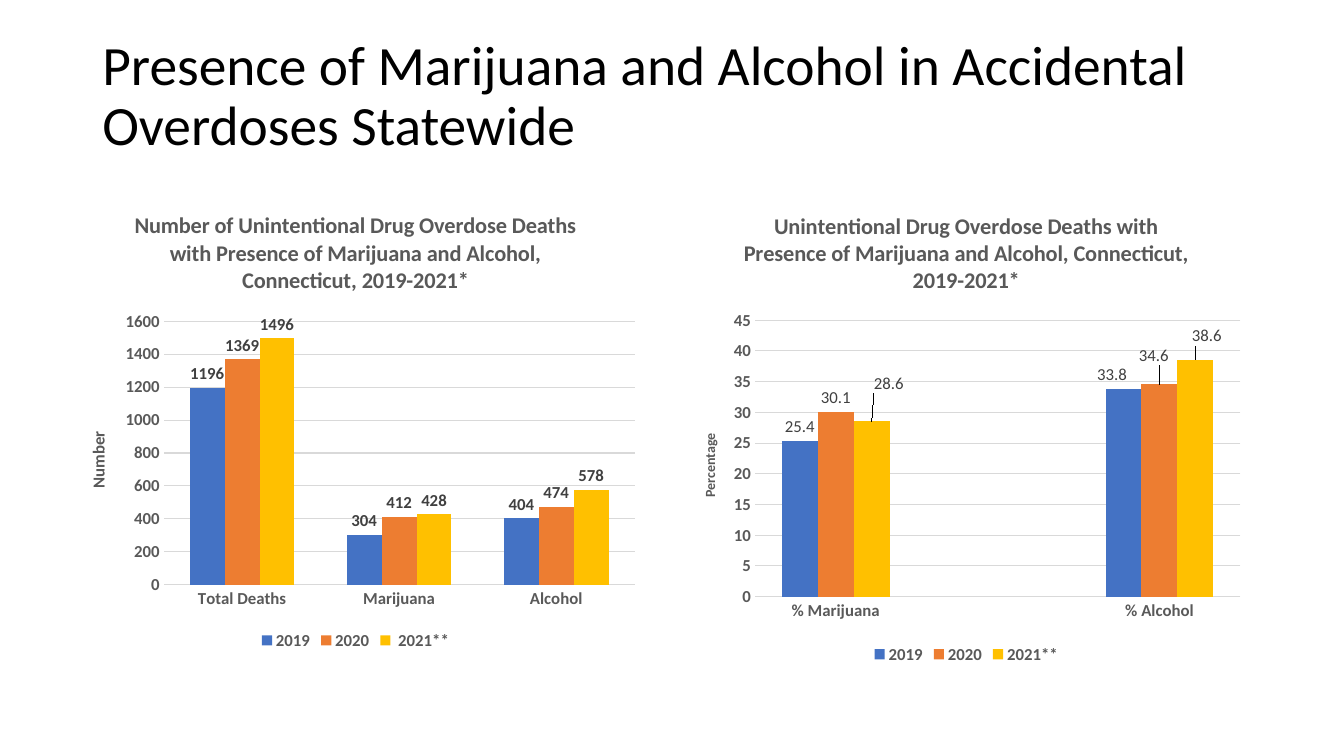
"""Build a slide with two column charts on marijuana and alcohol in overdoses."""
from lxml import etree
from pptx import Presentation
from pptx.chart.data import CategoryChartData
from pptx.dml.color import RGBColor
from pptx.enum.chart import XL_CHART_TYPE, XL_LABEL_POSITION, XL_LEGEND_POSITION, XL_TICK_MARK
from pptx.enum.text import MSO_ANCHOR
from pptx.util import Cm, Pt

COLUMN = XL_CHART_TYPE.COLUMN_CLUSTERED
ABOVE = XL_LABEL_POSITION.OUTSIDE_END
BOTTOM = XL_LEGEND_POSITION.BOTTOM
NO_TICK = XL_TICK_MARK.NONE
MIDDLE = MSO_ANCHOR.MIDDLE
NS = "http://schemas.openxmlformats.org/drawingml/2006/chart"

FACE = "Calibri"
HUES = {"ink": "000000", "text": "595959", "label": "404040", "grid": "D9D9D9",
        "2019": "4472C4", "2020": "ED7D31", "2021**": "FFC000"}
TITLE = "Presence of Marijuana and Alcohol in Accidental Overdoses Statewide"
CHARTS = [
    {"title": "Number of Unintentional Drug Overdose Deaths with Presence of "
              "Marijuana and Alcohol, Connecticut, 2019-2021*",
     "box": (1.63, 4.83, 14.66, 11.66),
     "plot": {"x": 0.17, "y": 0.28, "w": 0.81, "h": 0.57},
     "axis": "Number", "size": 12, "top": 1600, "step": 200, "bold": True,
     "cats": ["Total Deaths", "Marijuana", "Alcohol"],
     "rows": {"2019": [1196, 304, 404], "2020": [1369, 412, 474],
              " 2021**": [1496, 428, 578]},
     "shifts": {}},
    {"title": "Unintentional Drug Overdose Deaths with Presence of "
              "Marijuana and Alcohol, Connecticut, 2019-2021*",
     "box": (17.15, 4.83, 14.4, 12.01),
     "plot": {"x": 0.13, "y": 0.27, "w": 0.85, "h": 0.58},
     "axis": "Percentage", "size": 10, "top": 45, "step": 5, "bold": False,
     "cats": ["% Marijuana", "", "% Alcohol"],
     "rows": {"2019": [25.4, None, 33.8], "2020": [30.1, None, 34.6],
              "2021**": [28.6, None, 38.6]},
     "shifts": {("2019", 2): (-0.02, 0), ("2020", 2): (-0.01, -0.03),
                ("2021**", 0): (0.03, -0.05), ("2021**", 2): (0.02, -0.02)}},
]


def paint(hue):
    return RGBColor.from_string(HUES[hue])


def style(font, size=12, hue="text", bold=True):
    font.name, font.size, font.bold = FACE, Pt(size), bold
    font.color.rgb = paint(hue)


def write(frame, text, **look):
    para = frame.paragraphs[0]
    run = para.add_run()
    run.text = text
    style(run.font, **look)
    return para


def place(node, index, inner=False, **spots):
    for old in node.findall(f"{{{NS}}}layout"):
        node.remove(old)
    layout = etree.Element(f"{{{NS}}}layout")
    manual = etree.SubElement(layout, f"{{{NS}}}manualLayout")
    pairs = [("layoutTarget", "inner"), ("xMode", "edge"), ("yMode", "edge")] if inner else []
    for tag, value in pairs + list(spots.items()):
        etree.SubElement(manual, f"{{{NS}}}{tag}").set("val", str(value))
    node.insert(index, layout)


def set_axes(chart, item):
    for axis in (chart.category_axis, chart.value_axis):
        axis.major_tick_mark = axis.minor_tick_mark = NO_TICK
        axis.format.line.fill.background()
        style(axis.tick_labels.font)
    axis = chart.value_axis
    axis.minimum_scale, axis.maximum_scale, axis.major_unit = 0, item["top"], item["step"]
    axis.has_major_gridlines = True
    line = axis.major_gridlines.format.line
    line.color.rgb, line.width = paint("grid"), Pt(0.75)
    write(axis.axis_title.text_frame, item["axis"], size=item["size"])
    body = axis.axis_title.element.xpath(".//a:bodyPr")[0]
    body.set("rot", "-5400000")
    body.set("vert", "horz")


def set_bars(chart, item):
    plot = chart.plots[0]
    plot.gap_width, plot.overlap, plot.vary_by_categories = 150, 0, False
    for row in plot.series:
        row.format.fill.solid()
        row.format.fill.fore_color.rgb = paint(row.name.strip())
        labels = row.data_labels
        labels.show_value, labels.position = True, ABOVE
        style(labels.font, hue="label", bold=item["bold"])
        for (name, spot), (x, y) in item["shifts"].items():
            if name == row.name:
                label = row.points[spot].data_label
                label.position = ABOVE
                style(label.font, hue="label", bold=item["bold"])
                node = row.data_labels._element.xpath(f"c:dLbl[c:idx/@val='{spot}']")[0]
                place(node, 1, x=x, y=y)


def add_chart(slide, item):
    data = CategoryChartData()
    data.categories = item["cats"]
    for name, values in item["rows"].items():
        data.add_series(name, values)
    chart = slide.shapes.add_chart(COLUMN, *map(Cm, item["box"]), data).chart
    style(chart.font, size=10, hue="ink", bold=False)
    chart.has_title = True
    write(chart.chart_title.text_frame, item["title"], size=16)
    chart.has_legend = True
    chart.legend.position, chart.legend.include_in_layout = BOTTOM, False
    style(chart.legend.font)
    set_axes(chart, item)
    set_bars(chart, item)
    place(chart.element.xpath(".//c:plotArea")[0], 0, inner=True, **item["plot"])


def main():
    deck = Presentation()
    deck.slide_width, deck.slide_height = Cm(33.87), Cm(19.05)
    slide = deck.slides.add_slide(deck.slide_layouts[6])
    frame = slide.shapes.add_textbox(Cm(2.33), Cm(1.01), Cm(29.21), Cm(2.88)).text_frame
    frame.word_wrap, frame.vertical_anchor = True, MIDDLE
    write(frame, TITLE, size=39.6, hue="ink", bold=False).line_spacing = 0.9
    for item in CHARTS:
        add_chart(slide, item)
    deck.save("out.pptx")


if __name__ == "__main__":
    main()
